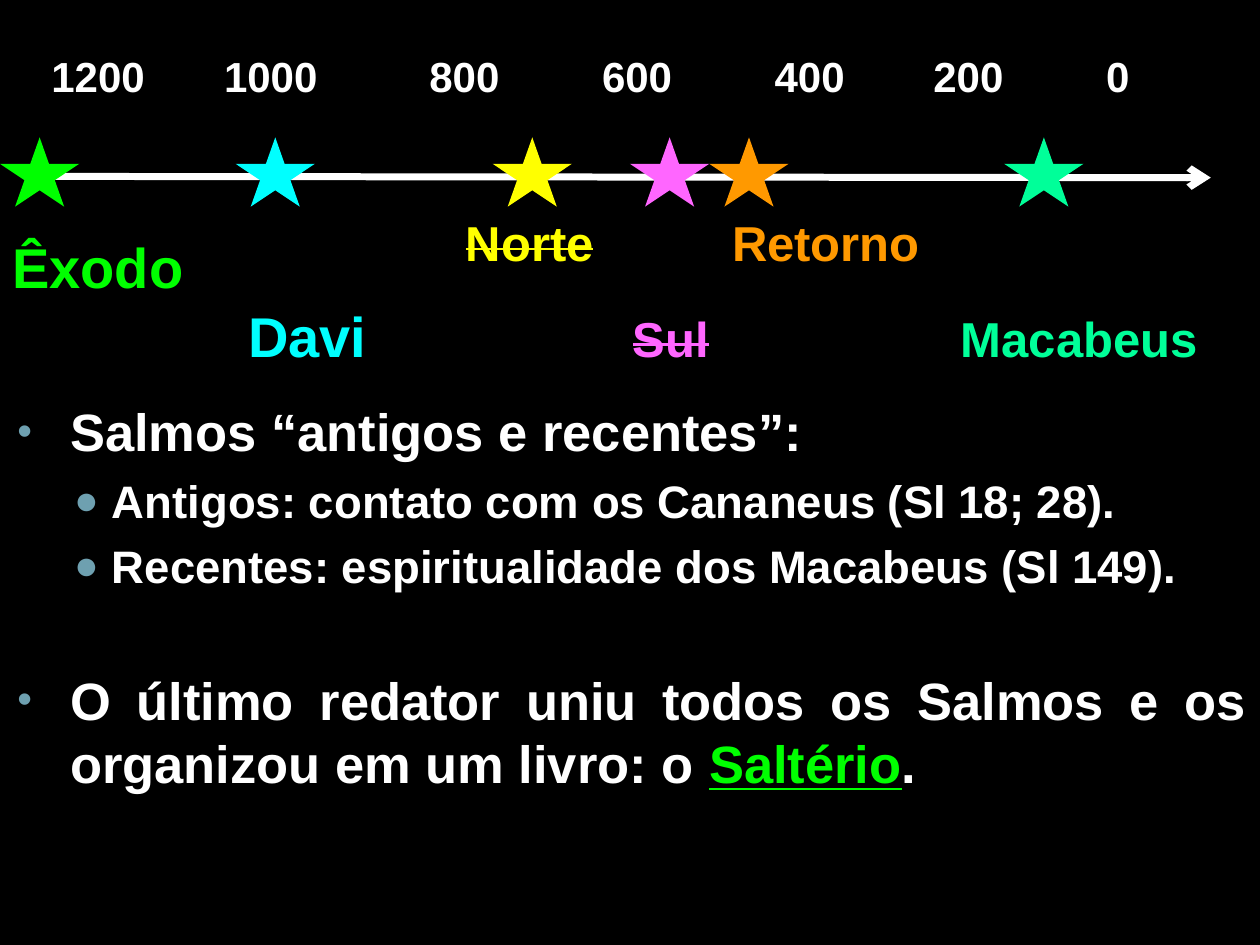
from lxml import etree
from pptx import Presentation
from pptx.dml.color import RGBColor
from pptx.enum import shapes, text
from pptx.oxml import ns
from pptx.util import Inches, Pt

WHITE, GREEN, BULLET = "FFFFFF", "00FF00", "6EA0B0"

# Years and the tab stop of each, from the left edge of the text
YEARS = [("1200", 0), ("1000", 1.37), ("800", 3), ("600", 4.37),
         ("400", 5.74), ("200", 7), ("0", 8.37)]

# Name, colour, star left, label (left, top, width, height), text format
LEFT, CENTER = text.PP_ALIGN.LEFT, text.PP_ALIGN.CENTER
EVENTS = [
    ("Êxodo", GREEN, 0, (0, 1.8, 1.57, 0.64), dict(size=32)),
    ("Davi", "00FFFF", 1.87, (1.87, 2.34, 1.15, 0.64), dict(size=32)),
    ("Norte", "FFFF00", 3.91, (3.59, 1.64, 1.23, 0.57), dict(size=28, strike=True)),
    ("Sul", "FF66FF", 5, (4.92, 2.4, 0.81, 0.57), dict(size=28, strike=True)),
    ("Retorno", "FF9900", 5.63, (5.7, 1.64, 1.71, 0.57), dict(size=28)),
    ("Macabeus", "00FF99", 7.97, (7.51, 2.4, 2.11, 0.57), dict(size=28)),
]

# Level, space before in points, spans of text with their format
POINTS = [
    (0, 6, [("Salmos “antigos e recentes”:", {})]),
    (1, 6, [("Antigos: contato com os Cananeus (Sl 18; 28).", {})]),
    (1, 6, [("Recentes: espiritualidade dos Macabeus (Sl 149).", {})]),
    (0, 43, [("O último redator uniu todos os Salmos e os organizou em um livro: o ", {}),
             ("Saltério", dict(color=GREEN, underline=True)),
             (".", {})]),
]
LEVELS = [dict(size=30, margin=0.46, indent=-0.42, bullet="•", bullet_size=80),
          dict(size=26, margin=0.79, indent=-0.3, bullet="●", bullet_size=90)]


def rgb(color):
    return RGBColor.from_string(color)


def add_child(parent, tag, **attributes):
    child = etree.SubElement(parent, ns.qn(tag))
    for name, value in attributes.items():
        child.set(name, str(value))
    return child


def add_span(para, words, size, color=WHITE, underline=False, strike=False):
    span = para.add_run()
    span.text = words
    font = span.font
    font.name, font.size, font.bold = "Arial", Pt(size), True
    font.color.rgb = rgb(color)
    if underline:
        font.underline = True
    if strike:
        font._element.set("strike", "sngStrike")


def add_box(slide, place, wrap=True):
    box = slide.shapes.add_textbox(*map(Inches, place))
    box.text_frame.word_wrap = wrap
    return box.text_frame


def add_star(slide, left, color):
    star = slide.shapes.add_shape(shapes.MSO_SHAPE.STAR_5_POINT, Inches(left),
                                  Inches(1.09), Inches(0.63), Inches(0.55))
    star.shadow.inherit = False
    star.fill.solid()
    star.fill.fore_color.rgb = rgb(color)
    star.line.fill.background()


def add_axis(slide):
    axis = slide.shapes.add_connector(shapes.MSO_CONNECTOR.STRAIGHT, Inches(0.31),
                                      Inches(1.4), Inches(9.61), Inches(1.41))
    axis.line.color.rgb = rgb(WHITE)
    axis.line.width = Pt(4)
    add_child(axis.line._get_or_add_ln(), "a:tailEnd", type="arrow")
    add_child(axis._element.spPr, "a:effectLst")


def add_years(slide):
    para = add_box(slide, (0.31, 0.35, 9.2, 0.5)).paragraphs[0]
    tabs = add_child(para._p.get_or_add_pPr(), "a:tabLst")
    for _, stop in YEARS[1:]:
        add_child(tabs, "a:tab", pos=Inches(stop), algn="l")
    add_span(para, "\t".join(year for year, _ in YEARS), 24)


def add_points(slide):
    frame = add_box(slide, (0, 3.12, 10, 4.38))
    for index, (level, space, spans) in enumerate(POINTS):
        para = frame.add_paragraph() if index else frame.paragraphs[0]
        style = LEVELS[level]
        para.level = level
        para.alignment = text.PP_ALIGN.JUSTIFY
        para.space_before = Pt(space)
        props = para._p.get_or_add_pPr()
        props.set("marL", str(Inches(style["margin"])))
        props.set("indent", str(Inches(style["indent"])))
        add_child(add_child(props, "a:buClr"), "a:srgbClr", val=BULLET)
        add_child(props, "a:buSzPct", val=style["bullet_size"] * 1000)
        add_child(props, "a:buFont", typeface="Arial")
        add_child(props, "a:buChar", char=style["bullet"])
        for words, look in spans:
            add_span(para, words, style["size"], **look)


def main():
    deck = Presentation()
    deck.slide_width, deck.slide_height = Inches(10), Inches(7.5)
    slide = deck.slides.add_slide(deck.slide_layouts[6])
    slide.background.fill.solid()
    slide.background.fill.fore_color.rgb = rgb("000000")

    add_points(slide)
    add_axis(slide)
    add_years(slide)
    for name, color, star_left, place, look in EVENTS:
        add_star(slide, star_left, color)
        para = add_box(slide, place, wrap=False).paragraphs[0]
        para.alignment = LEFT if look["size"] == 32 else CENTER
        add_span(para, name, color=color, **look)
    deck.save("out.pptx")


if __name__ == "__main__":
    main()
